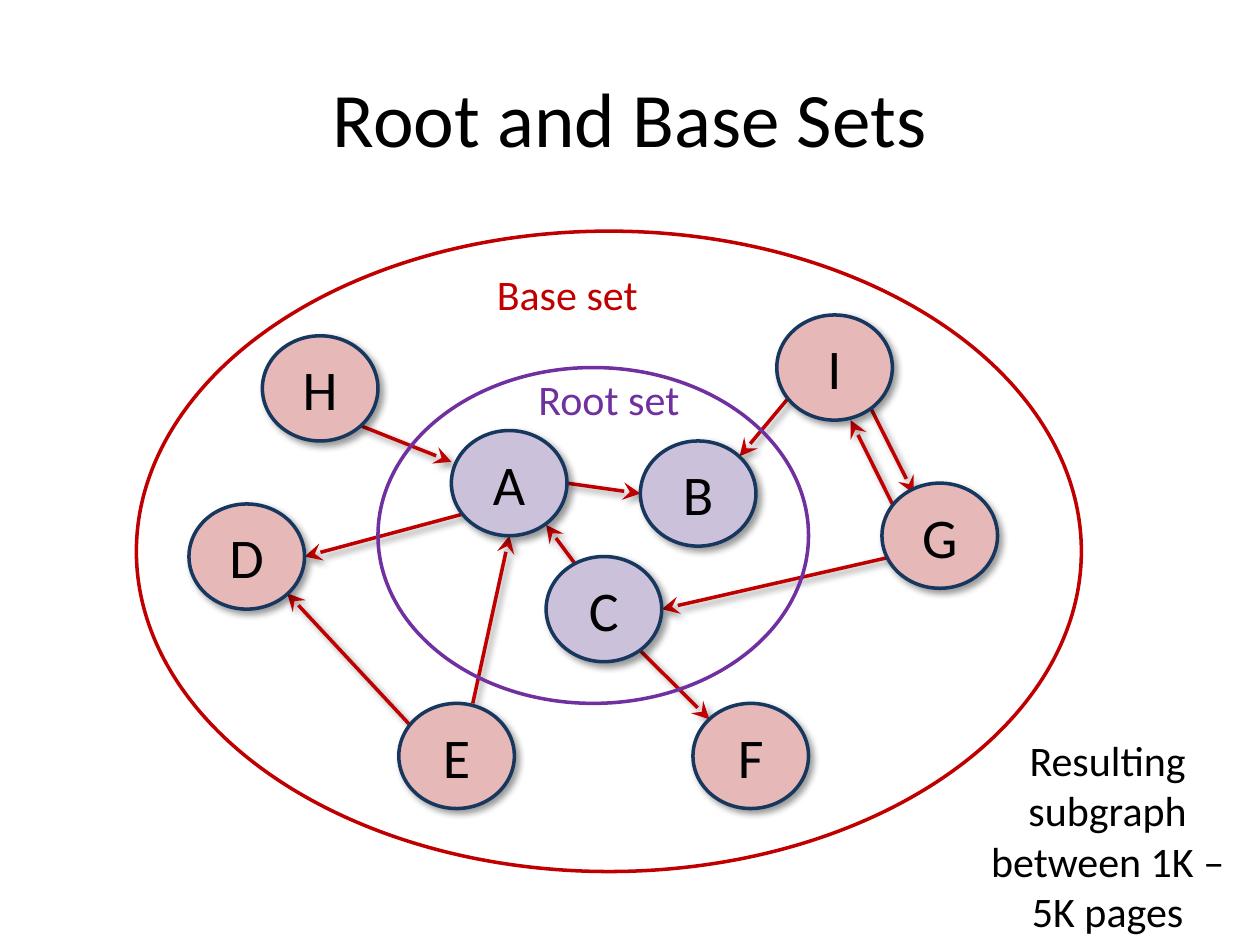
from dataclasses import dataclass
from typing import NamedTuple

from lxml.etree import SubElement
from pptx import Presentation
from pptx.dml.color import RGBColor
from pptx.enum.shapes import MSO_CONNECTOR, MSO_SHAPE
from pptx.enum.text import MSO_ANCHOR, PP_ALIGN
from pptx.oxml.ns import qn
from pptx.util import Cm, Pt


@dataclass(frozen=True)
class Theme:
    font: str = "Calibri"
    ink: str = "000000"
    outline: str = "17375E"
    base: str = "C00000"
    base_fill: str = "E6B9B8"
    root: str = "7030A0"
    root_fill: str = "CCC1DA"
    title_size: int = 44
    node_size: int = 32
    label_size: int = 24
    line_width: int = 2


class Area(NamedTuple):
    left: float
    top: float
    width: float
    height: float

    def lengths(self) -> list:
        return [Cm(value) for value in self]


class Node(NamedTuple):
    name: str
    left: float
    top: float


class Link(NamedTuple):
    """An arrow between two points, in centimetres."""
    x1: float
    y1: float
    x2: float
    y2: float


class Label(NamedTuple):
    text: str
    area: Area
    color: str


class PageSet(NamedTuple):
    ring: Area
    color: str
    node_fill: str
    nodes: list
    links: list
    label: Label


THEME = Theme()
NODE_WIDTH, NODE_HEIGHT = 2.33, 2.12

BASE_SET = PageSet(
    Area(2.75, 4.66, 19.05, 12.91), THEME.base, THEME.base_fill,
    [Node("D", 3.81, 10.16), Node("E", 8.04, 14.18), Node("F", 13.97, 14.18),
     Node("H", 5.29, 6.77), Node("I", 15.66, 6.35), Node("G", 17.78, 9.74)],
    [Link(7.29, 8.59, 9.1, 9.31),       # H to A
     Link(9.31, 10.37, 6.14, 11.22),    # A to D
     Link(8.26, 14.61, 5.79, 11.96),    # E to D
     Link(12.91, 13.12, 14.3, 14.5),    # C to F
     Link(15.88, 8.04, 14.91, 9.2),     # I to B
     Link(17.57, 8.26, 18.42, 9.95),    # I to G
     Link(17.99, 10.16, 17.15, 8.47),   # G to I
     Link(17.99, 11.22, 13.34, 12.28),  # G to C
     Link(9.53, 14.18, 10.27, 10.8)],   # E to A
    Label("Base set", Area(9.53, 5.29, 3.81, 1.27), THEME.base))

ROOT_SET = PageSet(
    Area(7.62, 7.41, 8.68, 6.77), THEME.root, THEME.root_fill,
    [Node("A", 9.1, 8.68), Node("B", 12.91, 8.89), Node("C", 11.01, 11.22)],
    [Link(11.43, 9.74, 12.91, 9.95),    # A to B
     Link(11.64, 11.43, 11.01, 10.58)],  # C to A
    Label("Root set", Area(10.58, 7.41, 3.39, 1.27), THEME.root))

TITLE = Label("Root and Base Sets", Area(1.27, 0.76, 22.86, 3.18), THEME.ink)
NOTE = Label("Resulting subgraph between 1K – 5K pages",
             Area(19.26, 14.68, 6.14, 4.37), THEME.ink)


def rgb(color: str) -> RGBColor:
    return RGBColor.from_string(color)


def write(frame, text: str, size: int, color: str, anchor=MSO_ANCHOR.TOP) -> None:
    frame.word_wrap = True
    frame.vertical_anchor = anchor
    para = frame.paragraphs[0]
    para.alignment = PP_ALIGN.CENTER
    span = para.add_run()
    span.text = text
    span.font.name = THEME.font
    span.font.size = Pt(size)
    span.font.color.rgb = rgb(color)


def set_line(line, color: str) -> None:
    line.color.rgb = rgb(color)
    line.width = Pt(THEME.line_width)


def add_shadow(properties) -> None:
    """Append a soft shadow falling to the lower right."""
    effects = properties.find(qn("a:effectLst"))
    if effects is None:
        effects = SubElement(properties, qn("a:effectLst"))
    shadow = SubElement(effects, qn("a:outerShdw"), blurRad=str(Pt(4)),
                        dist=str(Pt(3)), dir="2700000", algn="tl",
                        rotWithShape="0")
    color = SubElement(shadow, qn("a:srgbClr"), val=THEME.ink)
    SubElement(color, qn("a:alpha"), val="40000")


def draw_label(shapes, label: Label, size: int = THEME.label_size,
               anchor=MSO_ANCHOR.TOP) -> None:
    box = shapes.add_textbox(*label.area.lengths())
    write(box.text_frame, label.text, size, label.color, anchor)


def draw_ring(shapes, area: Area, color: str) -> None:
    ring = shapes.add_shape(MSO_SHAPE.OVAL, *area.lengths())
    ring.shadow.inherit = False
    ring.fill.background()
    set_line(ring.line, color)


def draw_link(shapes, link: Link) -> None:
    arrow = shapes.add_connector(MSO_CONNECTOR.STRAIGHT,
                                 *[Cm(value) for value in link])
    set_line(arrow.line, THEME.base)
    SubElement(arrow.line._get_or_add_ln(), qn("a:tailEnd"), type="stealth",
               w="lg", len="lg")
    add_shadow(arrow._element.spPr)


def draw_node(shapes, node: Node, fill: str) -> None:
    area = Area(node.left, node.top, NODE_WIDTH, NODE_HEIGHT)
    circle = shapes.add_shape(MSO_SHAPE.OVAL, *area.lengths())
    circle.shadow.inherit = False
    circle.fill.solid()
    circle.fill.fore_color.rgb = rgb(fill)
    set_line(circle.line, THEME.outline)
    add_shadow(circle._element.spPr)
    write(circle.text_frame, node.name, THEME.node_size, THEME.ink,
          MSO_ANCHOR.MIDDLE)


def draw_set(page, page_set: PageSet) -> None:
    shapes = page.shapes.add_group_shape().shapes
    draw_ring(shapes, page_set.ring, page_set.color)
    for link in page_set.links:
        draw_link(shapes, link)
    for node in page_set.nodes:
        draw_node(shapes, node, page_set.node_fill)
    draw_label(shapes, page_set.label)


def main() -> None:
    deck = Presentation()
    deck.slide_width, deck.slide_height = Cm(25.4), Cm(19.05)
    page = deck.slides.add_slide(deck.slide_layouts[6])
    draw_label(page.shapes, TITLE, THEME.title_size, MSO_ANCHOR.MIDDLE)
    draw_set(page, BASE_SET)
    draw_label(page.shapes, NOTE)
    draw_set(page, ROOT_SET)
    deck.save("out.pptx")


if __name__ == "__main__":
    main()
